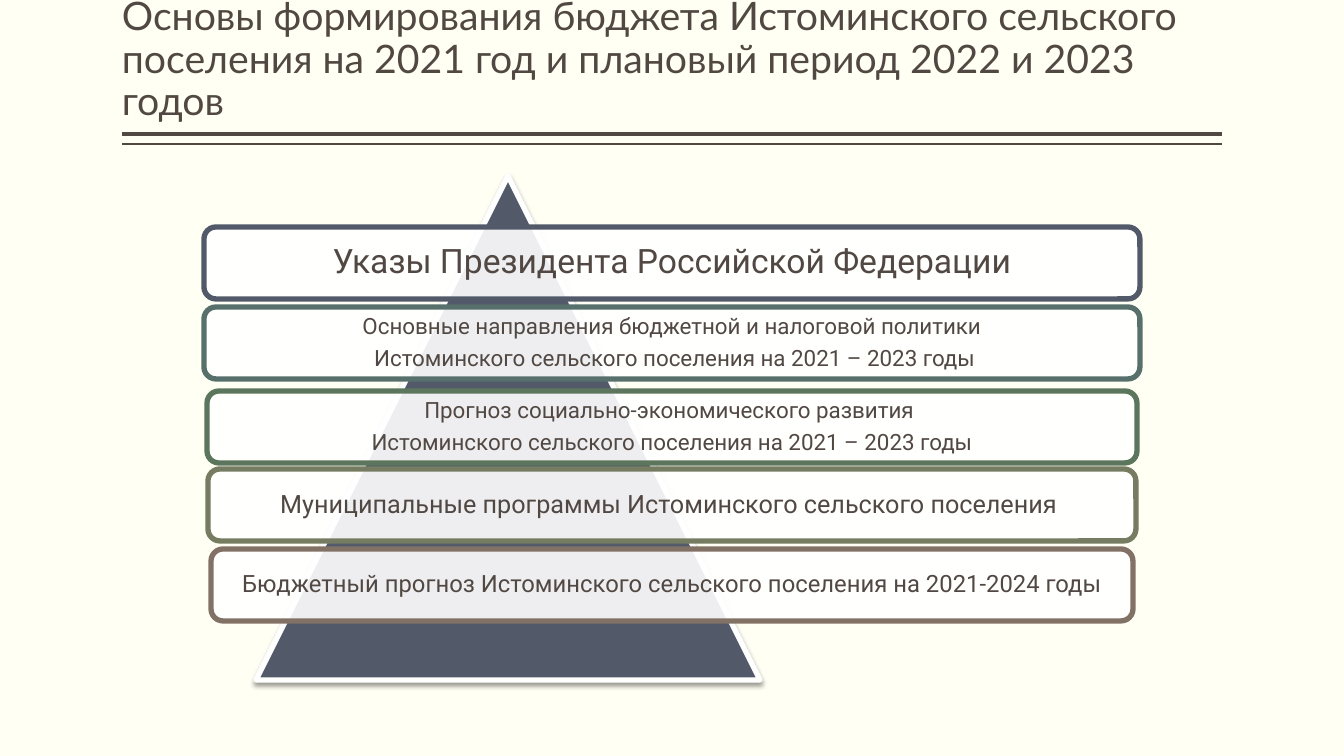
import lxml.etree
import pptx
import pptx.dml.color
import pptx.enum.shapes
import pptx.enum.text
import pptx.oxml
import pptx.oxml.ns
import pptx.util

PX = 914400 / 100.8
SLIDE_WIDTH, SLIDE_HEIGHT = 1344, 756
INK, PAPER, SLATE, WHITE = "514843", "FFFFF3", "525A6A", "FFFFFF"
SHAPES = pptx.enum.shapes.MSO_SHAPE
ANCHORS = pptx.enum.text.MSO_ANCHOR
ALIGNS = pptx.enum.text.PP_ALIGN

TITLE = ("Основы формирования бюджета Истоминского сельского поселения "
         "на 2021 год и плановый период 2022 и 2023 годов")
FOUNDATIONS = [
    (227, 936, SLATE, 24, 10, ["Указы Президента Российской Федерации"]),
    (307, 936, "57706C", 16, 7, ["Основные направления бюджетной и налоговой политики",
                                 " Истоминского сельского поселения на 2021 – 2023 годы"]),
    (391, 930, "5C765D", 16, 7, ["Прогноз социально-экономического развития ",
                                 "Истоминского сельского поселения на 2021 – 2023 годы"]),
    (469, 928, "767C61", 18, 7, ["Муниципальные программы Истоминского сельского поселения "]),
    (549, 922, "827266", 17, 7, ["Бюджетный прогноз Истоминского сельского поселения на 2021-2024 годы"]),
]


def px(length):
    """Turn pixels into EMU."""
    return pptx.util.Emu(round(length * PX))


def rgb(color):
    """Turn a hex string into a colour."""
    return pptx.dml.color.RGBColor.from_string(color)


def apply(target, values):
    """Set every attribute named in the dict of values."""
    for name, value in values.items():
        setattr(target, name, value)


def add_effects(element, content=""):
    """Append an effect list to the shape properties."""
    xml = f'<a:effectLst {pptx.oxml.ns.nsdecls("a")}>{content}</a:effectLst>'
    element.spPr.append(pptx.oxml.parse_xml(xml))


def write(shape, paragraphs, insets, frame_format, paragraph_format, font_format):
    """Fill the text frame with equally formatted paragraphs."""
    frame = shape.text_frame
    sides = ("margin_left", "margin_top", "margin_right", "margin_bottom")
    apply(frame, dict(zip(sides, map(px, insets))))
    apply(frame, {"word_wrap": True, **frame_format})
    for index, text in enumerate(paragraphs):
        paragraph = frame.add_paragraph() if index else frame.paragraphs[0]
        apply(paragraph, {"line_spacing": 0.9, **paragraph_format})
        run = paragraph.add_run()
        run.text = text
        apply(run.font, font_format)
        run.font.color.rgb = rgb(INK)


def add_block(slide, preset, box, fill, outline, weight):
    """Add a filled and outlined preset shape."""
    block = slide.shapes.add_shape(preset, *map(px, box))
    block.fill.solid()
    block.fill.fore_color.rgb = rgb(fill)
    block.line.color.rgb = rgb(outline)
    block.line.width = pptx.util.Pt(weight)
    return block


def add_heading(slide, left, top, width, height):
    """Place the title and the double rule beneath it."""
    for gap, weight in ((5, 3), (15, 1)):
        y = top + height + gap
        rule = slide.shapes.add_connector(
            pptx.enum.shapes.MSO_CONNECTOR.STRAIGHT, *map(px, (left + width, y, left, y)))
        rule.line.color.rgb = rgb(INK)
        rule.line.width = pptx.util.Pt(weight)
        add_effects(rule._element)
    title = slide.shapes.add_textbox(*map(px, (left, top, width, height)))
    write(title, [TITLE], (0, 5, 0, 5), {"vertical_anchor": ANCHORS.BOTTOM}, {},
          {"size": pptx.util.Pt(28), "name": "Lato"})


def add_pyramid(slide, left, top, width, height):
    """Place the triangle with its soft shadow."""
    pyramid = add_block(slide, SHAPES.ISOSCELES_TRIANGLE, (left, top, width, height),
                        SLATE, WHITE, 3.8)
    add_effects(pyramid._element,
                '<a:outerShdw blurRad="44450" dist="25400" dir="5400000" rotWithShape="0">'
                '<a:srgbClr val="000000"><a:alpha val="38000"/></a:srgbClr></a:outerShdw>')


def add_foundation(slide, left, top, width, height, color, size, inset, lines):
    """Place one translucent band with its centred text."""
    band = add_block(slide, SHAPES.ROUNDED_RECTANGLE, (left, top, width, height),
                     WHITE, color, 3.8)
    band.shadow.inherit = False
    white = band._element.spPr.find(pptx.oxml.ns.qn("a:solidFill"))[0]
    lxml.etree.SubElement(white, pptx.oxml.ns.qn("a:alpha"), val="90000")
    write(band, lines, [inset] * 4, {"vertical_anchor": ANCHORS.MIDDLE},
          {"alignment": ALIGNS.CENTER, "space_after": pptx.util.Pt(size * 0.35)},
          {"size": pptx.util.Pt(size), "name": "Roboto"})


def main():
    """Build the slide and save it."""
    deck = pptx.Presentation()
    apply(deck, {"slide_width": px(SLIDE_WIDTH), "slide_height": px(SLIDE_HEIGHT)})
    slide = deck.slides.add_slide(deck.slide_layouts[6])
    slide.background.fill.solid()
    slide.background.fill.fore_color.rgb = rgb(PAPER)
    add_heading(slide, 122, 8, 1100, 121)
    add_pyramid(slide, 256, 176, 504, 504)
    for top, width, color, size, inset, lines in FOUNDATIONS:
        left = (SLIDE_WIDTH - width) // 2
        add_foundation(slide, left, top, width, 72, color, size, inset, lines)
    deck.save("out.pptx")


if __name__ == "__main__":
    main()
